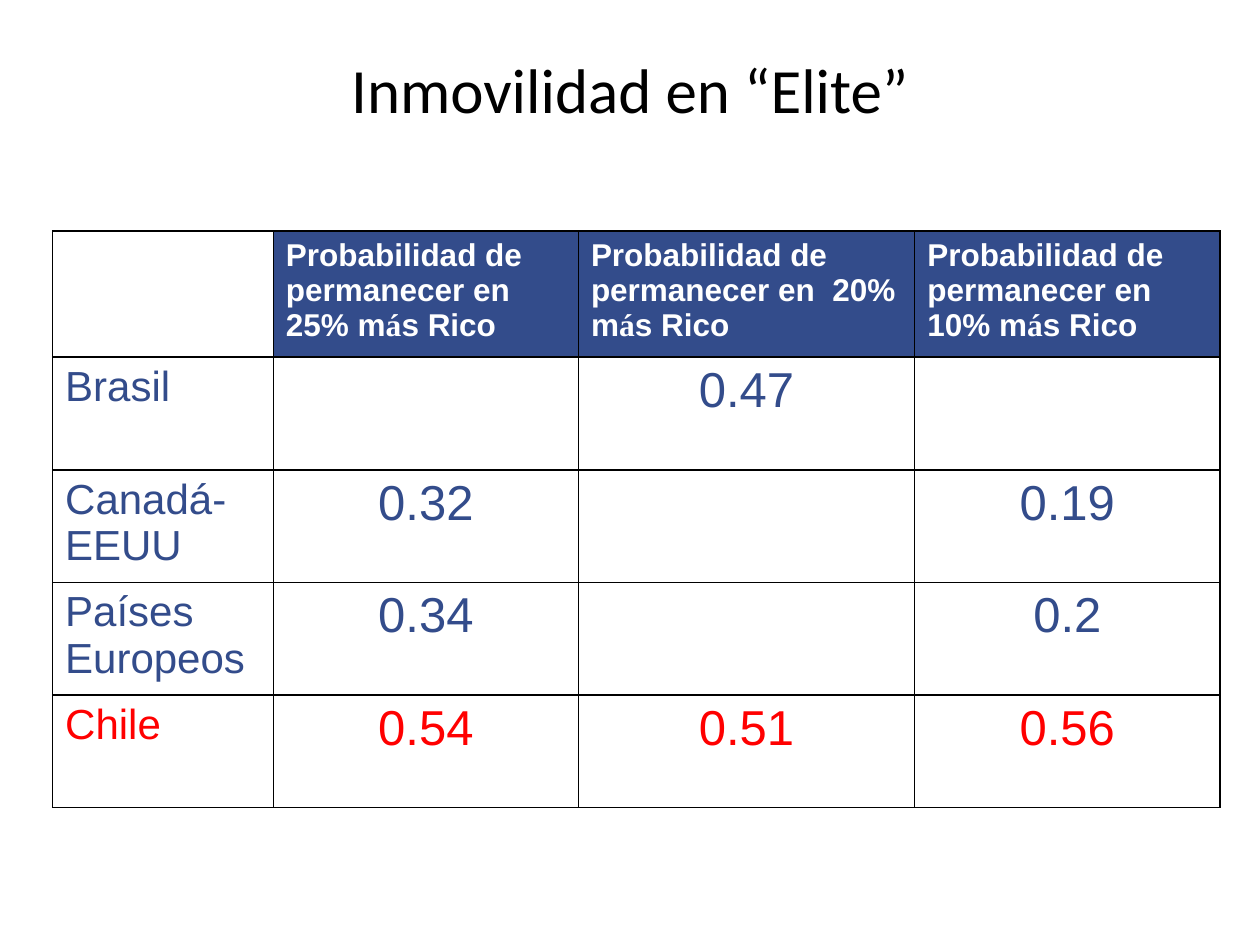
from lxml import etree
from pptx import Presentation
from pptx.dml.color import RGBColor
from pptx.enum.text import MSO_ANCHOR, PP_ALIGN
from pptx.oxml.ns import qn
from pptx.util import Cm, Pt

LEFT, CENTER = PP_ALIGN.LEFT, PP_ALIGN.CENTER
MIDDLE = MSO_ANCHOR.MIDDLE
BLUE, RED, WHITE, BLACK = "334C8B", "FF0000", "FFFFFF", "000000"

TITLE = "Inmovilidad en “Elite”"
SHARES = ["25%", "20%", "10%"]
ROWS = [
    ("Brasil", ["", "0.47", ""], BLUE),
    ("Canadá- EEUU", ["0.32", "", "0.19"], BLUE),
    ("Países Europeos", ["0.34", "", "0.2"], BLUE),
    ("Chile", ["0.54", "0.51", "0.56"], RED),
]
COLUMN_WIDTHS = [4.45, 6.15, 6.78, 6.15]
ROW_HEIGHTS = [2.54] + [2.27] * len(ROWS)


def color(value):
    return RGBColor.from_string(value)


def add_text(frame, text, size=18, fill=BLACK, font="Arial", bold=False, align=LEFT):
    paragraph = frame.paragraphs[0]
    paragraph.alignment = align
    run = paragraph.add_run()
    run.text = text
    run.font.name = font
    run.font.size = Pt(size)
    run.font.bold = bold
    run.font.color.rgb = color(fill)


def format_cell(cell, fill):
    properties = cell._tc.get_or_add_tcPr()
    for side in ("a:lnL", "a:lnR", "a:lnT", "a:lnB"):
        line = etree.SubElement(properties, qn(side), w=str(Pt(1)))
        solid = etree.SubElement(line, qn("a:solidFill"))
        etree.SubElement(solid, qn("a:srgbClr"), val=BLACK)
    cell.fill.solid()
    cell.fill.fore_color.rgb = color(fill)


def add_title(slide):
    title = slide.shapes.title
    title.left, title.top = Cm(1.9), Cm(0.84)
    title.width, title.height = Cm(21.6), Cm(1.9)
    title.text_frame.vertical_anchor = MIDDLE
    add_text(title.text_frame, TITLE, size=36, font="Calibri", align=CENTER)


def add_probability_table(slide):
    table = slide.shapes.add_table(
        len(ROW_HEIGHTS), len(COLUMN_WIDTHS), Cm(1.06), Cm(4.66),
        Cm(sum(COLUMN_WIDTHS)), Cm(sum(ROW_HEIGHTS)),
    ).table
    table.first_row = table.horz_banding = False
    for column, width in zip(table.columns, COLUMN_WIDTHS):
        column.width = Cm(width)
    for row, height in zip(table.rows, ROW_HEIGHTS):
        row.height = Cm(height)

    format_cell(table.cell(0, 0), WHITE)
    for column, share in enumerate(SHARES, 1):
        cell = table.cell(0, column)
        format_cell(cell, BLUE)
        pieces = [
            (f"Probabilidad de permanecer en  {share} m", "Arial"),
            ("á", "Times New Roman"),
            ("s Rico", "Arial"),
        ]
        for text, font in pieces:
            add_text(cell.text_frame, text, fill=WHITE, font=font, bold=True)

    for row, (country, values, text_color) in enumerate(ROWS, 1):
        for column, text in enumerate([country] + values):
            cell = table.cell(row, column)
            format_cell(cell, WHITE)
            if text:
                size, align = (28, CENTER) if column else (24, LEFT)
                add_text(cell.text_frame, text, size=size, fill=text_color, align=align)


def main():
    presentation = Presentation()
    presentation.slide_width, presentation.slide_height = Cm(25.4), Cm(19.05)
    slide = presentation.slides.add_slide(presentation.slide_layouts[5])
    add_title(slide)
    add_probability_table(slide)
    presentation.save("out.pptx")


if __name__ == "__main__":
    main()
